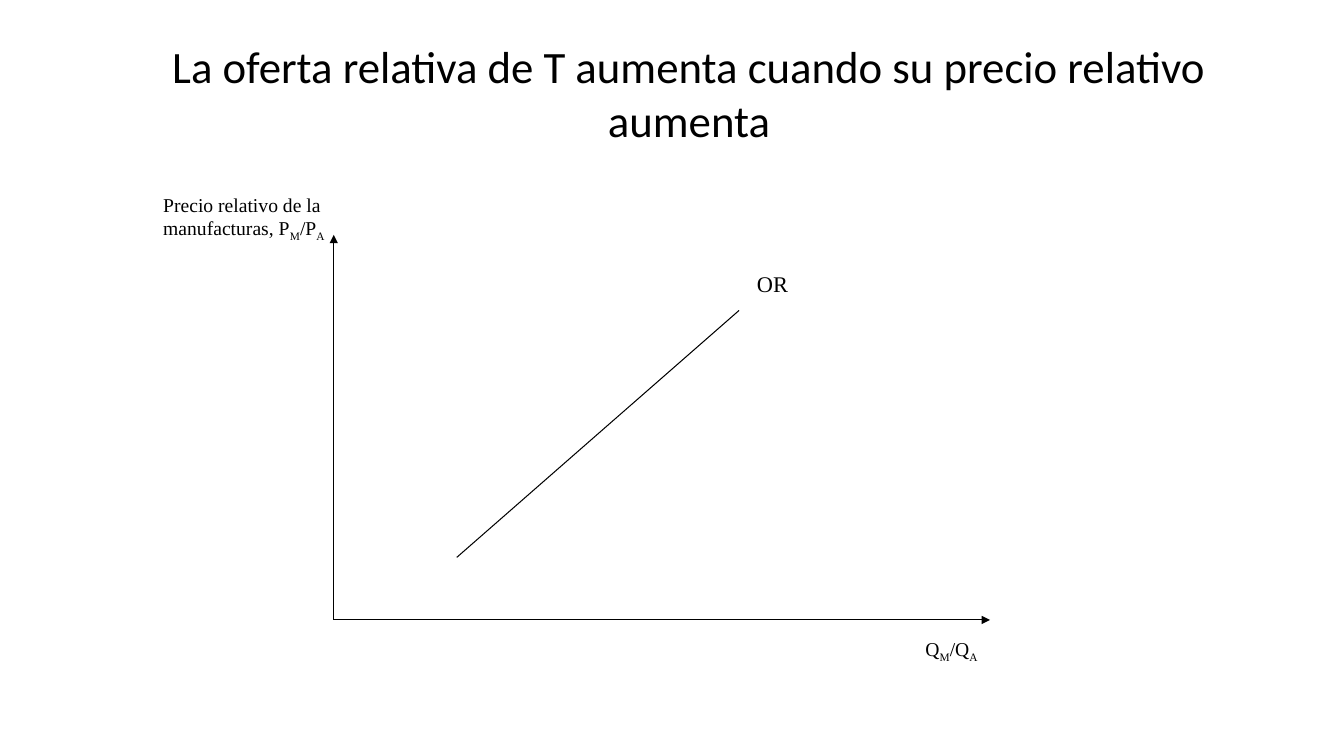
import pptx
import pptx.util
import pptx.dml.color
import pptx.enum.shapes
import pptx.enum.text
import pptx.oxml.ns
from lxml import etree

Inches = pptx.util.Inches
BLACK = pptx.dml.color.RGBColor(0, 0, 0)
WHITE = pptx.dml.color.RGBColor(255, 255, 255)


class Chart:
    """Hold the slide and its style, and draw titles, labels and lines."""

    def __init__(self, slide):
        self.slide = slide
        self.serif = "Times New Roman"
        self.sans = "Calibri"
        self.width = pptx.util.Pt(0.75)

    def text(self, frame, parts, size, font, align):
        frame.word_wrap = True
        para = frame.paragraphs[0]
        para.alignment = align
        para.font.size = pptx.util.Pt(size)
        para.font.name = font
        para.font.color.rgb = BLACK
        for index, part in enumerate(parts):
            run = para.add_run()
            run.text = part
            if index % 2:
                run._r.get_or_add_rPr().set("baseline", "-25000")

    def title(self, text, box):
        shape = self.slide.shapes.add_textbox(*map(Inches, box))
        frame = shape.text_frame
        frame.vertical_anchor = pptx.enum.text.MSO_ANCHOR.MIDDLE
        self.text(frame, [text], 32, self.sans, pptx.enum.text.PP_ALIGN.CENTER)

    def label(self, parts, box, size=14):
        kind = pptx.enum.shapes.MSO_SHAPE.RECTANGLE
        shape = self.slide.shapes.add_shape(kind, *map(Inches, box))
        shape.shadow.inherit = False
        shape.fill.solid()
        shape.fill.fore_color.rgb = WHITE
        shape.line.fill.background()
        frame = shape.text_frame
        frame.vertical_anchor = pptx.enum.text.MSO_ANCHOR.TOP
        self.text(frame, parts, size, self.serif, pptx.enum.text.PP_ALIGN.LEFT)

    def line(self, start, end, arrow=False):
        kind = pptx.enum.shapes.MSO_CONNECTOR.STRAIGHT
        line = self.slide.shapes.add_connector(kind, *map(Inches, start + end))
        line.line.color.rgb = BLACK
        line.line.width = self.width
        qn = pptx.oxml.ns.qn
        props = line._element.spPr
        if arrow:
            etree.SubElement(props.find(qn("a:ln")), qn("a:tailEnd"), type="triangle")
        etree.SubElement(props, qn("a:effectLst"))


def main():
    deck = pptx.Presentation()
    deck.slide_width = Inches(13.33)
    deck.slide_height = Inches(7.5)
    chart = Chart(deck.slides.add_slide(deck.slide_layouts[6]))
    zero = (3.31, 6.15)
    chart.label(["Precio relativo de la manufacturas, P", "M", "/P", "A"],
                (1.52, 1.86, 2.51, 1.22))
    chart.label(["OR"], (7.41, 2.63, 1.23, 0.63), 16)
    chart.line(zero, (zero[0], 2.33), arrow=True)
    chart.line(zero, (9.82, zero[1]), arrow=True)
    chart.line((4.53, 5.53), (7.33, 3.08))
    chart.title("La oferta relativa de T aumenta cuando su precio relativo aumenta",
                (1, 0.29, 11.67, 1.25))
    chart.label(["Q", "M", "/Q", "A"], (9.08, 6.27, 2.31, 1.06))
    deck.save("out.pptx")


if __name__ == "__main__":
    main()
